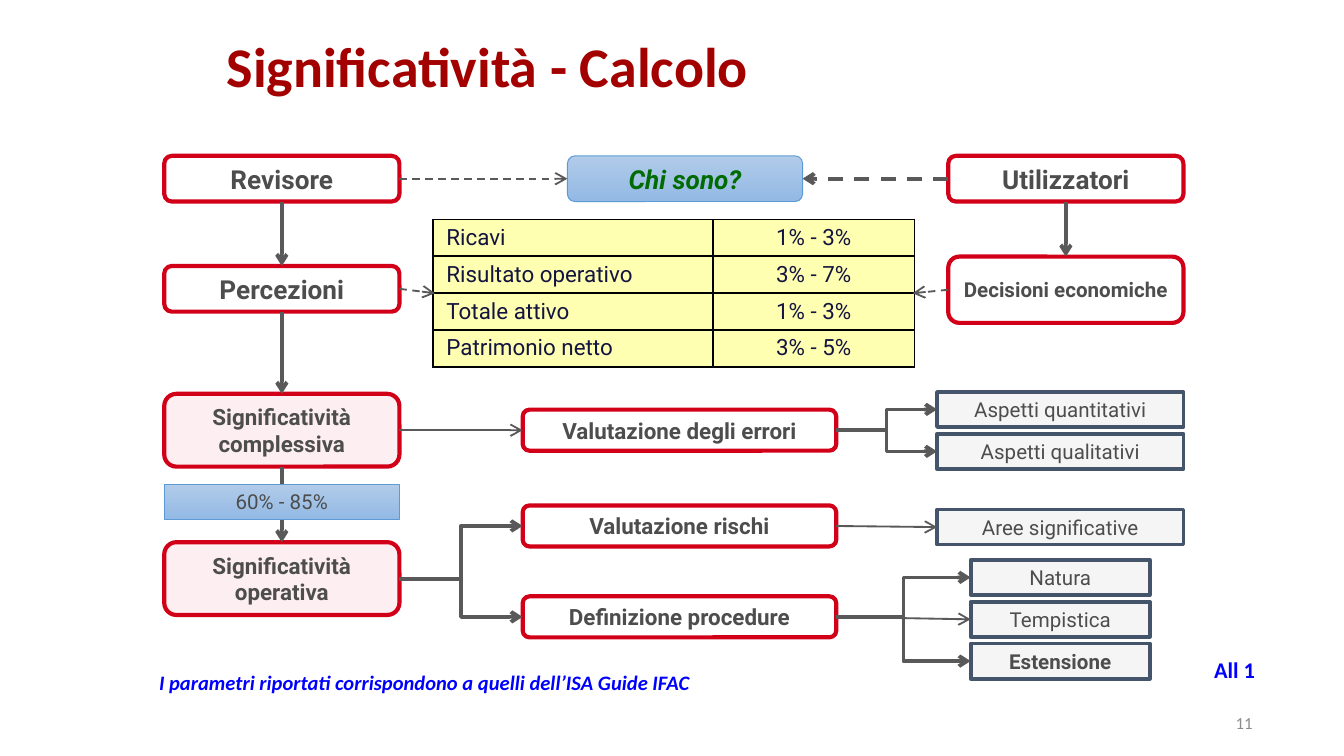
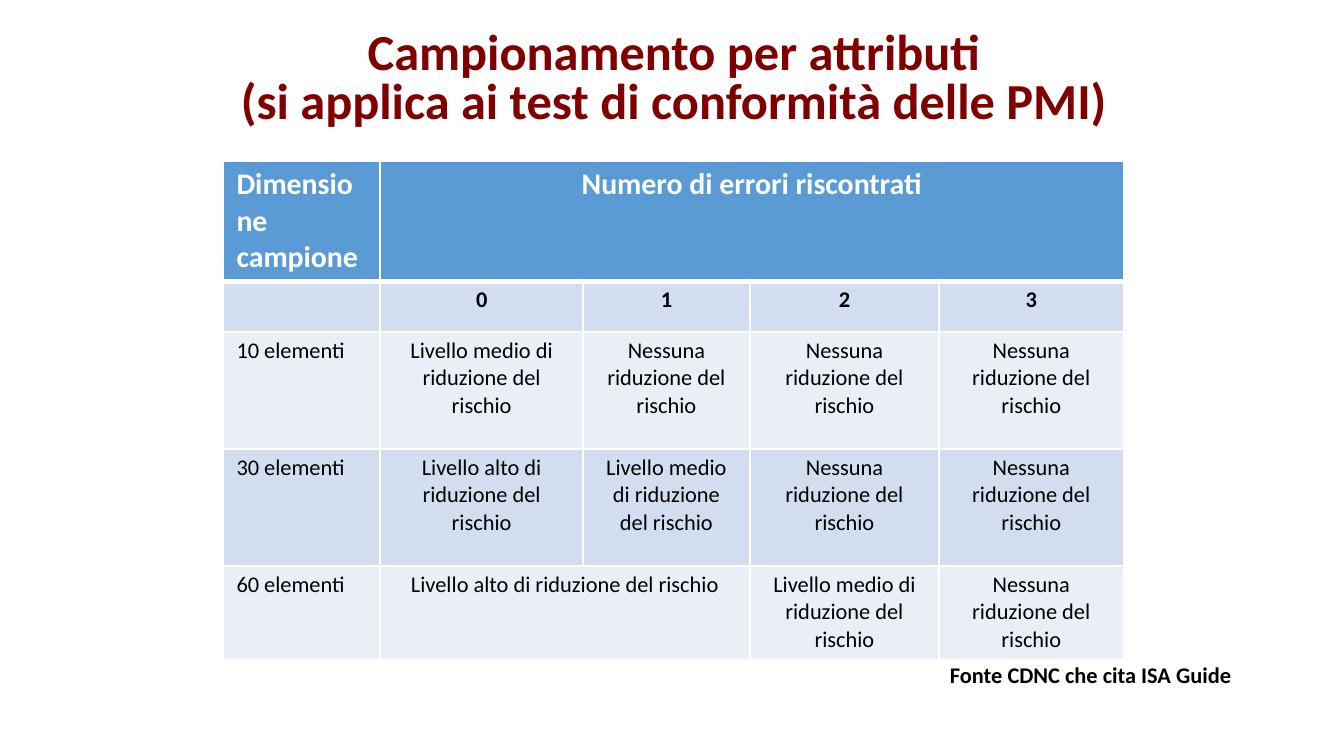
from dataclasses import dataclass

import pptx
import pptx.dml.color
import pptx.enum.dml
import pptx.enum.shapes
import pptx.enum.text
import pptx.oxml
import pptx.oxml.ns
import pptx.util

Pt = pptx.util.Pt
RGB = pptx.dml.color.RGBColor
SHAPE = pptx.enum.shapes.MSO_SHAPE
LINK = pptx.enum.shapes.MSO_CONNECTOR
ALIGN = pptx.enum.text.PP_ALIGN
ANCHOR = pptx.enum.text.MSO_ANCHOR

# Shared colours, fonts and insets
TITLE_RED, TITLE_MAROON = RGB(0xA3, 0, 0), RGB(0x80, 0, 0)
RED, PINK = RGB(0xD1, 0, 0x18), RGB(0xFD, 0xEE, 0xF1)
WHITE, BLACK = RGB(255, 255, 255), RGB(0, 0, 0)
INK, ARROW_GREY, NUMBER_GREY = RGB(0x4D, 0x4D, 0x4D), RGB(0x59, 0x59, 0x59), RGB(0x8C, 0x8C, 0x8C)
SLATE, PALE_GREY = RGB(0x44, 0x54, 0x6A), RGB(0xF5, 0xF5, 0xF5)
BLUE = RGB(0x5B, 0x9B, 0xD5)
SKY_GRADIENT = [RGB(0xB1, 0xCB, 0xE9), RGB(0x93, 0xB9, 0xE4)]
BAND_DARK, BAND_LIGHT = RGB(0xD2, 0xDE, 0xEF), RGB(0xEA, 0xEF, 0xF7)
GREEN, NOTE_BLUE = RGB(0, 0x6B, 0), RGB(0, 0, 255)
YELLOW, NAVY = RGB(255, 255, 0), RGB(0x14, 0x14, 0x40)
HEADING_FONT, DIAGRAM_FONT = "Calibri", "Roboto"
INSET_X, INSET_Y, CELL_INSET_X = 5.4, 2.7, 7.2
TOP, LEFT, BOTTOM, RIGHT = range(4)  # connection sites


@dataclass
class Box:
    left: float
    top: float
    width: float
    height: float

    def inside(self, left, top, width, height):
        return Box(self.left + left, self.top + top, width, height)

    def lengths(self):
        return Pt(self.left), Pt(self.top), Pt(self.width), Pt(self.height)


def write(frame, text, size=12, font=HEADING_FONT, color=BLACK, bold=False,
          italic=False, align=ALIGN.CENTER, spacing=None):
    """Fill a text frame, one paragraph for each line."""
    for number, line in enumerate(text.split("\n")):
        paragraph = frame.add_paragraph() if number else frame.paragraphs[0]
        paragraph.alignment = align
        if spacing:
            paragraph.line_spacing = spacing
        run = paragraph.add_run()
        run.text = line
        run.font.size, run.font.name = Pt(size), font
        run.font.bold, run.font.italic = bold, italic
        run.font.color.rgb = color


def set_frame(frame, anchor=ANCHOR.TOP, wrap=True):
    frame.auto_size = pptx.enum.text.MSO_AUTO_SIZE.NONE
    frame.word_wrap = wrap
    frame.vertical_anchor = anchor
    frame.margin_left = frame.margin_right = Pt(INSET_X)
    frame.margin_top = frame.margin_bottom = Pt(INSET_Y)
    return frame


def add_title(slide, box, text, anchor=ANCHOR.TOP, **text_format):
    title = slide.shapes.title
    title.left, title.top, title.width, title.height = box.lengths()
    write(set_frame(title.text_frame, anchor), text, bold=True, **text_format)


def add_label(slide, box, text, anchor=ANCHOR.TOP, wrap=True, **text_format):
    label = slide.shapes.add_textbox(*box.lengths())
    write(set_frame(label.text_frame, anchor, wrap), text, **text_format)


# Diagram parts
def add_node(slide, box, text, fill=WHITE, outline=RED, weight=2.25,
             rounded=True, **text_format):
    """Draw a labelled box; a list of two fill colours makes a gradient."""
    kind = SHAPE.ROUNDED_RECTANGLE if rounded else SHAPE.RECTANGLE
    node = slide.shapes.add_shape(kind, *box.lengths())
    node.shadow.inherit = False
    if isinstance(fill, list):
        node.fill.gradient()
        node.fill.gradient_angle = 270
        for stop, color in zip(node.fill.gradient_stops, fill):
            stop.color.rgb = color
    else:
        node.fill.solid()
        node.fill.fore_color.rgb = fill
    node.line.color.rgb, node.line.width = outline, Pt(weight)
    anchor = ANCHOR.MIDDLE if rounded else ANCHOR.TOP
    write(set_frame(node.text_frame, anchor), text,
          **{"font": DIAGRAM_FONT, "color": INK, **text_format})
    return node


def add_detail(slide, box, text, bold=False):
    return add_node(slide, box, text, fill=PALE_GREY, outline=SLATE, weight=2,
                    rounded=False, size=11, bold=bold)


def add_arrow(slide, start, end, weight=2.0, dashed=False, kind=LINK.STRAIGHT):
    """Start at a (node, site) pair; end at another or at an (x, y) point."""
    arrow = slide.shapes.add_connector(kind, 0, 0, 0, 0)
    arrow.begin_connect(*start)
    if isinstance(end[0], (int, float)):
        arrow.end_x, arrow.end_y = Pt(end[0]), Pt(end[1])
    else:
        arrow.end_connect(*end)
    arrow.line.color.rgb, arrow.line.width = ARROW_GREY, Pt(weight)
    if dashed:
        arrow.line.dash_style = pptx.enum.dml.MSO_LINE.DASH
    properties = arrow.line._get_or_add_ln()
    properties.append(xml_element('<a:tailEnd %s type="arrow"/>'))
    properties.getparent().append(xml_element("<a:effectLst %s/>"))


def xml_element(template):
    return pptx.oxml.parse_xml(template % pptx.oxml.ns.nsdecls("a"))


# Table parts
def add_grid(slide, box, columns, rows):
    grid = slide.shapes.add_table(len(rows), len(columns), *box.lengths()).table
    grid.first_row = grid.horz_banding = False
    for column, width in zip(grid.columns, columns):
        column.width = Pt(width)
    for row, height in zip(grid.rows, rows):
        row.height = Pt(height)
    return grid


def format_cell(cell, fill, border, opacity=None, **widths):
    cell.margin_left = cell.margin_right = Pt(CELL_INSET_X)
    cell.margin_top = cell.margin_bottom = Pt(INSET_Y)
    properties = cell._tc.get_or_add_tcPr()
    for side in ("lnL", "lnR", "lnT", "lnB"):
        properties.append(xml_element(
            f'<a:{side} %s w="{Pt(widths.get(side, 1))}"><a:solidFill>'
            f'<a:srgbClr val="{border}"/></a:solidFill></a:{side}>'))
    cell.fill.solid()
    cell.fill.fore_color.rgb = fill
    if opacity:
        color = properties.xpath("a:solidFill/a:srgbClr")[0]
        color.append(xml_element(f'<a:alpha %s val="{opacity * 1000}"/>'))


def threshold_table(slide, box):
    thresholds = [("Ricavi", "1% - 3%"), ("Risultato operativo", "3% - 7%"),
                  ("Totale attivo", "1% - 3%"), ("Patrimonio netto", "3% - 5%")]
    row_height = box.height / len(thresholds)
    grid = add_grid(slide, box, [150, box.width - 150], [row_height] * len(thresholds))
    for r, row in enumerate(thresholds):
        for c, text in enumerate(row):
            format_cell(grid.cell(r, c), YELLOW, BLACK, opacity=30)
            write(grid.cell(r, c).text_frame, text, font=DIAGRAM_FONT, color=NAVY,
                  align=ALIGN.CENTER if c else ALIGN.LEFT)


def materiality_flow(slide, box):
    side_width, middle_width, detail_width = 126, 168, 132
    middle_x, detail_x, right_x = 192, 414, box.width - side_width
    small_x, small_width = 432, 96
    head_height, middle_height, detail_height, pitch = 24.5, 22, 18.8, 22.4

    def side(x, y, text, height=head_height, size=14, **style):
        return add_node(slide, box.inside(x, y, side_width, height), text,
                        size=size, bold=True, **style)

    def middle(y, text):
        return add_node(slide, box.inside(middle_x, y, middle_width, middle_height),
                        text, bold=True)

    # Main chain, users and the question between them
    auditor = side(0, 0, "Revisore")
    perceptions = side(0, 59, "Percezioni")
    overall = side(0, 127.5, "Significatività complessiva", 39, 12, fill=PINK)
    operating = side(0, 207, "Significatività operativa", 39, 12, fill=PINK)
    question = side(216, 0, "Chi sono?", fill=SKY_GRADIENT, outline=BLUE,
                    weight=0.5, color=GREEN, italic=True)
    users = side(right_x, 0, "Utilizzatori")
    decisions = side(right_x, 54, "Decisioni economiche", 35.5, 11)

    # Evaluations and their details
    errors = middle(136, "Valutazione degli errori")
    risks = middle(187.3, "Valutazione rischi")
    procedures = middle(236, "Definizione procedure")
    aspects = [add_detail(slide, box.inside(detail_x, 126.5 + i * pitch, detail_width, detail_height), text)
               for i, text in enumerate(["Aspetti quantitativi", "Aspetti qualitativi"])]
    areas = add_detail(slide, box.inside(detail_x, 189.5, detail_width, detail_height),
                       "Aree significative")
    nature, timing, extent = [
        add_detail(slide, box.inside(small_x, 216.5 + i * pitch, small_width, detail_height),
                   text, bold=text == "Estensione")
        for i, text in enumerate(["Natura", "Tempistica", "Estensione"])]

    # Arrows
    for above, below in [(auditor, perceptions), (perceptions, overall),
                         (overall, operating), (users, decisions)]:
        add_arrow(slide, (above, BOTTOM), (below, TOP))
    for source, target in [(overall, errors), (risks, areas), (procedures, timing)]:
        add_arrow(slide, (source, RIGHT), (target, LEFT), weight=1)
    for source, target in [(operating, risks), (operating, procedures),
                           (errors, aspects[0]), (errors, aspects[1]),
                           (procedures, nature), (procedures, extent)]:
        add_arrow(slide, (source, RIGHT), (target, LEFT), kind=LINK.ELBOW)
    add_arrow(slide, (auditor, RIGHT), (question, LEFT), weight=1, dashed=True)
    add_arrow(slide, (users, LEFT), (question, RIGHT), dashed=True)

    # Thresholds, reached from both sides
    table_box = box.inside(144, 34, 258, 79.2)
    threshold_table(slide, table_box)
    entry_y = table_box.top + table_box.height / 2
    add_arrow(slide, (perceptions, RIGHT), (table_box.left + 1, entry_y), weight=1, dashed=True)
    add_arrow(slide, (decisions, LEFT), (table_box.left + table_box.width - 1, entry_y),
              weight=1, dashed=True)

    # Percentage over the last arrow of the chain
    add_node(slide, box.inside(0, 176, side_width, detail_height), "60% - 85%",
             fill=SKY_GRADIENT, outline=BLUE, weight=0.5, rounded=False, size=11)


def sampling_table(slide, box):
    high, medium, none = (f"{level} riduzione del rischio" for level in
                          ("Livello alto di", "Livello medio di", "Nessuna"))
    rows = [["Dimensione campione", "Numero di errori riscontrati", "", "", ""],
            ["", "0", "1", "2", "3"],
            ["10 elementi", medium, none, none, none],
            ["30 elementi", high, medium, none, none],
            ["60 elementi", high, "", medium, none]]
    grid = add_grid(slide, box, [84.2, 108.7, 89.3, 101.5, 98.7], [62.7, 22.4, 62.7, 62.7, 50.4])
    grid.cell(0, 1).merge(grid.cell(0, 4))
    grid.cell(4, 1).merge(grid.cell(4, 2))
    for r, row in enumerate(rows):
        header = r == 0
        fill = BLUE if header else BAND_DARK if r % 2 else BAND_LIGHT
        for c, text in enumerate(row):
            format_cell(grid.cell(r, c), fill, WHITE,
                        lnT=3 if r == 1 else 1, lnB=3 if header else 1)
            if text:
                write(grid.cell(r, c).text_frame, text, size=16 if header else 12,
                      color=WHITE if header else BLACK, bold=r < 2,
                      align=ALIGN.CENTER if c else ALIGN.LEFT)


# Slides
def materiality_slide(slide):
    add_title(slide, Box(116, 16, 454, 42), "Significatività - Calcolo", ANCHOR.MIDDLE,
              size=30, color=TITLE_RED, align=ALIGN.LEFT, spacing=0.9)
    materiality_flow(slide, Box(88, 83.5, 546, 281))
    add_label(slide, Box(35.5, 356.5, 384, 19),
              "I parametri riportati corrispondono a quelli dell’ISA Guide IFAC",
              size=11, color=NOTE_BLUE, bold=True, italic=True)
    add_label(slide, Box(645, 349, 33, 20), "All 1", wrap=False, color=NOTE_BLUE,
              bold=True, align=ALIGN.LEFT)
    add_label(slide, Box(638, 376.5, 57, 21.5), "11", ANCHOR.MIDDLE, size=9, color=NUMBER_GREY)


def sampling_slide(slide):
    add_title(slide, Box(104.5, 14.5, 513, 59),
              "Campionamento per attributi\n(si applica ai test di conformità delle PMI)",
              size=27, color=TITLE_MAROON, spacing=0.8)
    sampling_table(slide, Box(119.5, 86.5, 482.4, 260.9))
    add_label(slide, Box(503.5, 351.5, 183.5, 20), "Fonte CDNC che cita ISA Guide",
              bold=True, align=ALIGN.LEFT)


def main():
    deck = pptx.Presentation()
    deck.slide_width, deck.slide_height = Pt(720), Pt(405)
    title_only = deck.slide_layouts[5]
    for build in (materiality_slide, sampling_slide):
        build(deck.slides.add_slide(title_only))
    deck.save("out.pptx")


if __name__ == "__main__":
    main()
